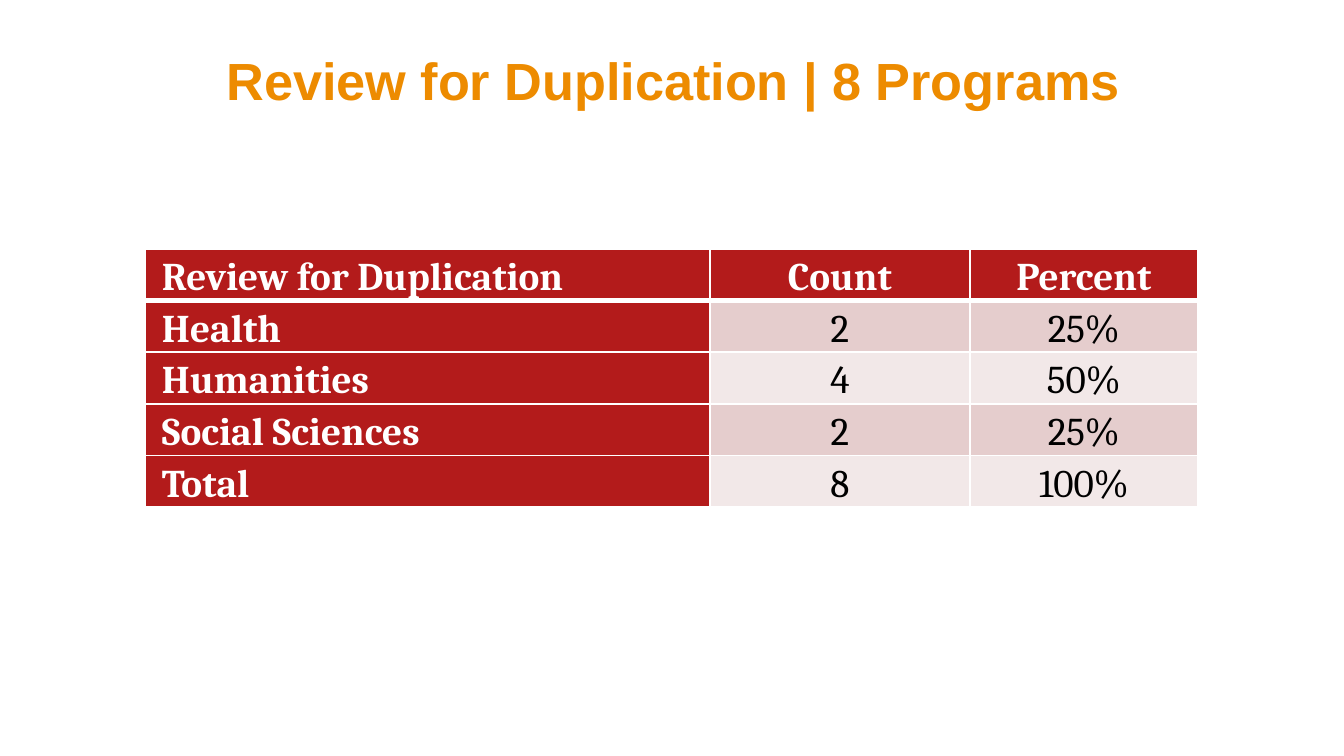
from lxml import etree
from pptx import Presentation
from pptx import util as u
from pptx.dml.color import RGBColor
from pptx.enum import text
from pptx.oxml.ns import qn

TITLE = "Review for Duplication | 8 Programs"
ROWS = [
    ("Review for Duplication", "Count", "Percent"),
    ("Health", "2", "25%"),
    ("Humanities", "4", "50%"),
    ("Social Sciences", "2", "25%"),
    ("Total", "8", "100%"),
]
COLS = [565, 260, 228]
HIGH = 258
COLORS = {
    "title": "ED8B00",
    "head": "B31B1B",
    "odd": "E5CDCD",
    "even": "F2E8E8",
    "white": "FFFFFF",
    "black": "000000",
}


def px(n):
    return u.Emu(round(n * 914400 / 134.4))


def color(name):
    return RGBColor.from_string(COLORS[name])


def write(frame, words, size, font, ink, bold=False, center=True):
    para = frame.paragraphs[0]
    para.alignment = text.PP_ALIGN.CENTER if center else text.PP_ALIGN.LEFT
    run = para.add_run()
    run.text = words
    run.font.size = u.Pt(size)
    run.font.name = font
    run.font.bold = bold
    run.font.color.rgb = color(ink)


def border(cell, widths):
    """Draw white lines; widths are points for left, right, top, bottom."""
    props = cell._tc.get_or_add_tcPr()
    for side, width in zip("LRTB", widths):
        line = etree.SubElement(props, qn(f"a:ln{side}"), w=str(u.Pt(width)))
        fill = etree.SubElement(line, qn("a:solidFill"))
        etree.SubElement(fill, qn("a:srgbClr"), val=COLORS["white"])


def add_title(slide):
    title = slide.shapes.title
    title.left, title.top, title.width, title.height = map(px, (23, 42, 1300, 75))
    frame = title.text_frame
    frame.word_wrap = True
    frame.auto_size = text.MSO_AUTO_SIZE.NONE
    frame.vertical_anchor = text.MSO_ANCHOR.MIDDLE
    write(frame, TITLE, 28, "Arial", "title", bold=True)


def add_grid(slide):
    grid = slide.shapes.add_table(
        len(ROWS), len(COLS), px(145), px(249), px(sum(COLS)), px(HIGH)
    ).table
    for col, width in zip(grid.columns, COLS):
        col.width = px(width)
    for r, row in enumerate(ROWS):
        grid.rows[r].height = px(HIGH / len(ROWS))
        for c, words in enumerate(row):
            cell = grid.cell(r, c)
            head = r == 0 or c == 0
            cell.margin_left = cell.margin_right = px(17)
            cell.margin_top = cell.margin_bottom = 0
            cell.vertical_anchor = text.MSO_ANCHOR.BOTTOM
            border(cell, (1, 1, 3 if r == 1 else 1, 3 if r == 0 else 1))
            cell.fill.solid()
            cell.fill.fore_color.rgb = color(
                "head" if head else "odd" if r % 2 else "even"
            )
            write(cell.text_frame, words, 21, "Cambria",
                  "white" if head else "black", bold=head, center=c > 0)


def main():
    deck = Presentation()
    deck.slide_width, deck.slide_height = px(1344), px(756)
    slide = deck.slides.add_slide(deck.slide_layouts[5])
    add_title(slide)
    add_grid(slide)
    deck.save("out.pptx")


if __name__ == "__main__":
    main()
